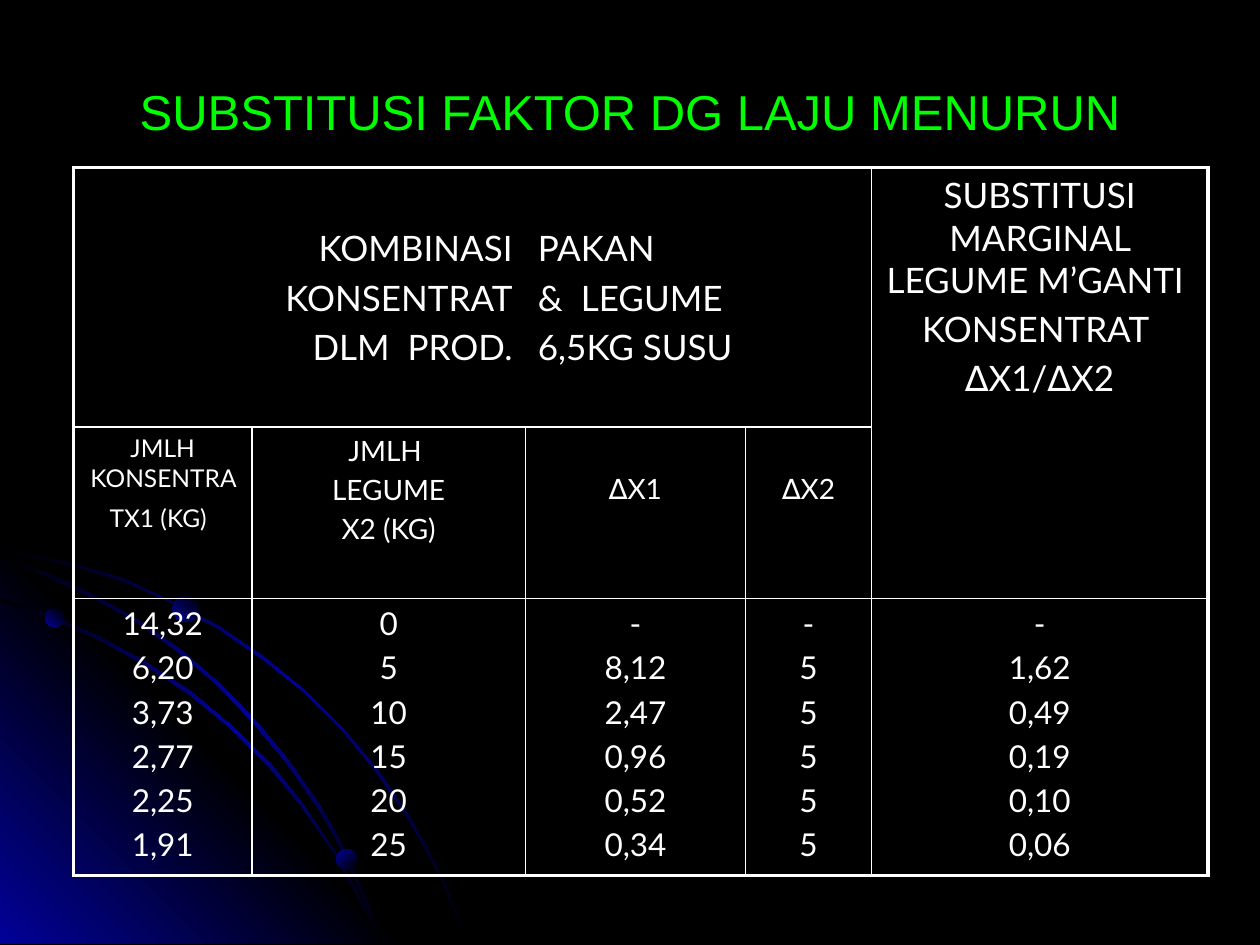
from dataclasses import dataclass
from lxml.etree import SubElement
from pptx import Presentation
from pptx.dml.color import RGBColor
from pptx.enum.shapes import MSO_SHAPE
from pptx.enum.text import MSO_ANCHOR, PP_ALIGN
from pptx.oxml.ns import qn
from pptx.util import Cm, Pt

BLACK, WHITE, BLUE, GREEN = "000000", "FFFFFF", "010199", "00FF00"
UNIT = Cm(0.0254)
COLUMN_WIDTHS = (3.6, 5.51, 4.44, 2.54, 6.78)
ROW_HEIGHTS = (5.23, 3.45, 5.59)
OUTER, INNER, NONE = 2.25, 1, 0


@dataclass(frozen=True)
class Sweep:
    points: tuple[tuple[int, int], ...]
    colors: tuple[str, ...]
    angle: int


@dataclass(frozen=True)
class Orb:
    left: float
    top: float
    size: float
    angle: int


@dataclass(frozen=True)
class Entry:
    lines: tuple[str, ...]
    size: int
    align: PP_ALIGN = PP_ALIGN.CENTER
    anchor: MSO_ANCHOR = MSO_ANCHOR.TOP
    top_margin: float = 0.13


STREAK = (BLACK, BLUE, BLACK)
SWEEPS = (
    Sweep(((57, 447), (28, 441), (0, 435), (0, 438), (28, 443), (56, 449),
           (97, 461), (135, 478), (173, 499), (208, 523), (241, 549), (271, 579),
           (298, 612), (323, 649), (337, 673), (350, 698), (360, 723), (370, 749),
           (372, 749), (362, 723), (352, 698), (339, 673), (325, 648), (300, 611),
           (272, 578), (242, 548), (209, 521), (174, 497), (136, 477), (98, 459)),
          STREAK, 315),
    Sweep(((322, 749), (0, 749), (0, 427)), (BLUE, BLACK, BLUE), 45),
    Sweep(((285, 714), (294, 732), (301, 749), (303, 749), (296, 730), (286, 712),
           (266, 676), (242, 640), (215, 606), (184, 576), (152, 549), (117, 526),
           (79, 505), (41, 488), (0, 475), (0, 477), (39, 490), (77, 507),
           (115, 528), (150, 551), (183, 578), (213, 608), (240, 641), (265, 677)),
          STREAK, 315),
    Sweep(((0, 442), (0, 444), (36, 457), (74, 475), (109, 494), (142, 518),
           (173, 544), (202, 575), (227, 605), (252, 641), (267, 667), (280, 694),
           (292, 722), (301, 749), (303, 749), (294, 720), (282, 693), (269, 665),
           (254, 639), (229, 603), (204, 573), (175, 543), (144, 516), (111, 493),
           (76, 473), (39, 455)),
          STREAK, 315),
)
ORBS = (
    Orb(0.91, 12.27, 0.38, 45),
    Orb(6.78, 17.12, 0.41, 315),
    Orb(3.48, 12.01, 0.53, 45),
)
FEED_ENTRIES = {
    (0, 1): Entry(("KOMBINASI", "KONSENTRAT", "DLM  PROD."), 20,
                  PP_ALIGN.RIGHT, MSO_ANCHOR.MIDDLE),
    (0, 2): Entry(("PAKAN", "&  LEGUME", "6,5KG SUSU"), 20,
                  PP_ALIGN.LEFT, MSO_ANCHOR.MIDDLE),
    (0, 4): Entry(("SUBSTITUSI MARGINAL LEGUME M’GANTI ", "KONSENTRAT ", "∆X1/∆X2"), 20),
    (1, 0): Entry(("JMLH KONSENTRATX1 (KG)",), 14),
    (1, 1): Entry(("JMLH ", "LEGUME", "X2 (KG)"), 16),
    (1, 2): Entry(("∆X1",), 16, top_margin=0.91),
    (1, 3): Entry(("∆X2",), 16, top_margin=0.91),
    (2, 0): Entry(("14,32", "6,20", "3,73", "2,77", "2,25", "1,91"), 18),
    (2, 1): Entry(("0", "5", "10", "15", "20", "25"), 18),
    (2, 2): Entry(("-", "8,12", "2,47", "0,96", "0,52", "0,34"), 18),
    (2, 3): Entry(("-", "5", "5", "5", "5", "5"), 18),
    (2, 4): Entry(("-", "1,62", "0,49", "0,19", "0,10", "0,06"), 18),
}


def color(code: str) -> RGBColor:
    return RGBColor.from_string(code)


def add_run(paragraph, text: str, size: int, font: str, code: str) -> None:
    run = paragraph.add_run()
    run.text = text
    run.font.size = Pt(size)
    run.font.name = font
    run.font.color.rgb = color(code)


def paint_gradient(shape, colors: tuple[str, ...], angle: int) -> None:
    shape.shadow.inherit = False
    shape.line.fill.background()
    shape.fill.gradient()
    shape.fill.gradient_angle = angle
    stops = shape._element.spPr.find(qn("a:gradFill")).find(qn("a:gsLst"))
    stops.clear()
    for index, code in enumerate(colors):
        position = 100000 * index // (len(colors) - 1)
        stop = SubElement(stops, qn("a:gs"), pos=str(position))
        SubElement(stop, qn("a:srgbClr"), val=code)


def draw_sweep(slide, sweep: Sweep) -> None:
    start, *rest = sweep.points
    builder = slide.shapes.build_freeform(*start, scale=UNIT)
    builder.add_line_segments(rest, close=True)
    paint_gradient(builder.convert_to_shape(), sweep.colors, sweep.angle)


def draw_orb(slide, orb: Orb) -> None:
    ellipse = slide.shapes.add_shape(
        MSO_SHAPE.OVAL, Cm(orb.left), Cm(orb.top), Cm(orb.size), Cm(orb.size))
    paint_gradient(ellipse, (BLUE, BLACK), orb.angle)


def vertical_width(row: int, edge: int) -> float:
    if edge in (0, len(COLUMN_WIDTHS)):
        return OUTER
    return NONE if row == 0 and edge < 4 else INNER


def horizontal_width(column: int, edge: int) -> float:
    if edge in (0, len(ROW_HEIGHTS)):
        return OUTER
    return NONE if column == 4 and edge == 1 else INNER


def draw_borders(cell, row: int, column: int) -> None:
    widths = {
        "a:lnL": vertical_width(row, column),
        "a:lnR": vertical_width(row, column + 1),
        "a:lnT": horizontal_width(column, row),
        "a:lnB": horizontal_width(column, row + 1),
    }
    properties = cell._tc.get_or_add_tcPr()
    for index, (tag, width) in enumerate(widths.items()):
        border = SubElement(properties, qn(tag), w=str(Pt(width)))
        if width:
            fill = SubElement(border, qn("a:solidFill"))
            SubElement(fill, qn("a:srgbClr"), val=WHITE)
        else:
            SubElement(border, qn("a:noFill"))
        properties.insert(index, border)


def write_entry(cell, entry: Entry) -> None:
    cell.vertical_anchor = entry.anchor
    cell.margin_top = Cm(entry.top_margin)
    frame = cell.text_frame
    for index, line in enumerate(entry.lines):
        paragraph = frame.add_paragraph() if index else frame.paragraphs[0]
        paragraph.alignment = entry.align
        paragraph.space_before = Pt(entry.size * 0.2)
        add_run(paragraph, line, entry.size, "Lato", WHITE)


def draw_feed_table(slide) -> None:
    feed = slide.shapes.add_table(
        len(ROW_HEIGHTS), len(COLUMN_WIDTHS), Cm(1.48), Cm(3.38),
        Cm(sum(COLUMN_WIDTHS)), Cm(sum(ROW_HEIGHTS))).table
    feed.first_row = feed.horz_banding = False
    for column, width in zip(feed.columns, COLUMN_WIDTHS):
        column.width = Cm(width)
    for row, height in enumerate(ROW_HEIGHTS):
        feed.rows[row].height = Cm(height)
        for column in range(len(COLUMN_WIDTHS)):
            cell = feed.cell(row, column)
            cell.fill.background()
            draw_borders(cell, row, column)
            if (row, column) in FEED_ENTRIES:
                write_entry(cell, FEED_ENTRIES[row, column])
    add_run(feed.cell(1, 0).text_frame.paragraphs[0], " ", 20, "Lato", WHITE)


def draw_title(slide) -> None:
    title = slide.shapes.title
    title.left, title.top, title.width, title.height = Cm(1.27), Cm(0.64), Cm(22.86), Cm(3.18)
    title.text_frame.vertical_anchor = MSO_ANCHOR.MIDDLE
    heading = title.text_frame.paragraphs[0]
    heading.alignment = PP_ALIGN.CENTER
    add_run(heading, "SUBSTITUSI FAKTOR DG LAJU MENURUN", 28, "Arial", GREEN)


def main() -> None:
    deck = Presentation()
    deck.slide_width, deck.slide_height = Cm(25.4), Cm(19.05)
    slide = deck.slides.add_slide(deck.slide_layouts[5])
    slide.background.fill.solid()
    slide.background.fill.fore_color.rgb = color(BLACK)
    for sweep in SWEEPS:
        draw_sweep(slide, sweep)
    for orb in ORBS:
        draw_orb(slide, orb)
    draw_title(slide)
    draw_feed_table(slide)
    deck.save("out.pptx")


if __name__ == "__main__":
    main()
